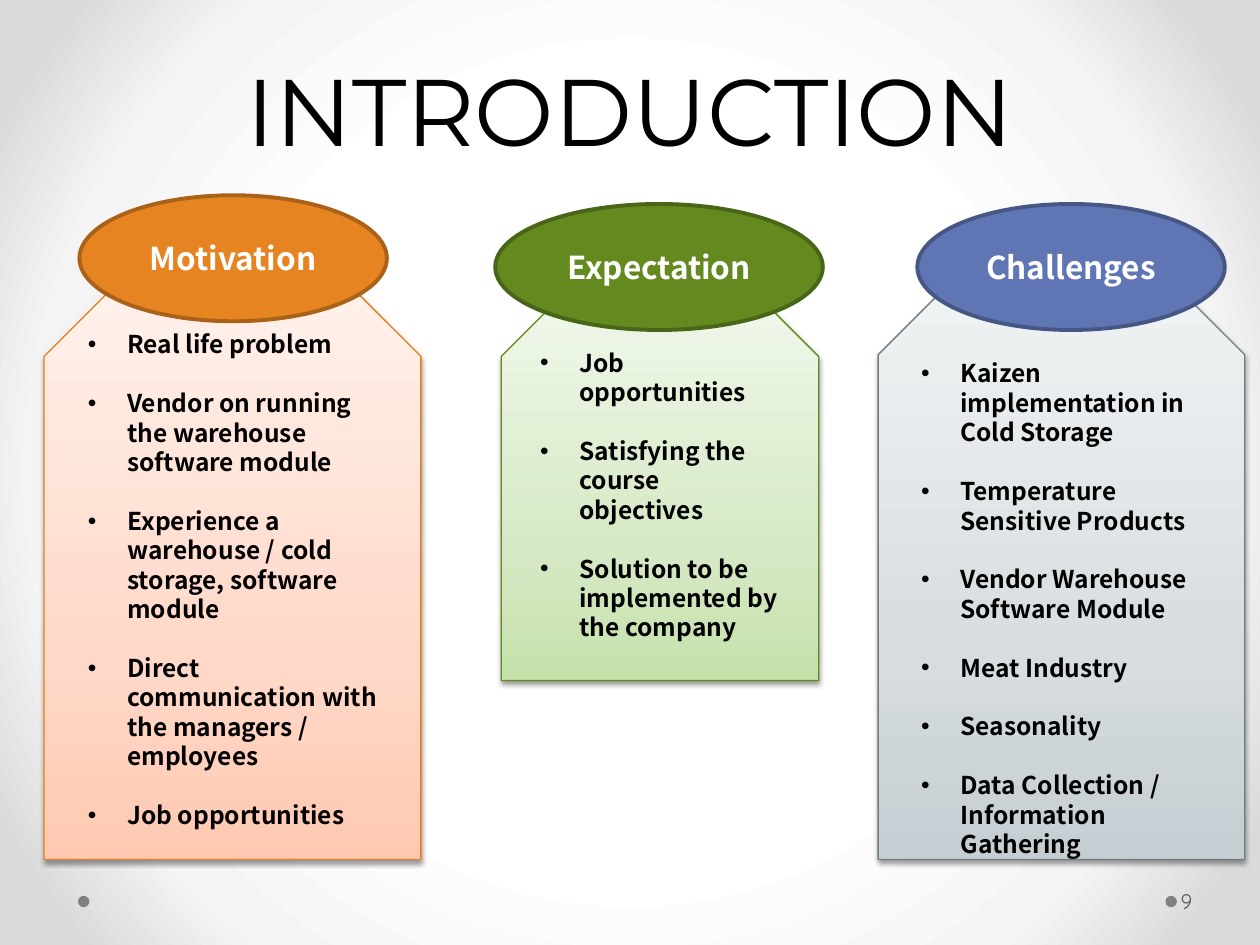
"""Build the introduction slide with three themed columns."""
import pptx
import pptx.dml.color
import pptx.enum.shapes
import pptx.enum.text
import pptx.oxml
import pptx.oxml.ns
import pptx.util

Pt = pptx.util.Pt
FORM = pptx.enum.shapes.MSO_SHAPE
ALIGN = pptx.enum.text.PP_ALIGN
ANCHOR = pptx.enum.text.MSO_ANCHOR
SPACE = pptx.oxml.ns.nsdecls("a")
BODY = "Noto Sans CJK SC"
STEP = 16.8
INDENT = 22.5

HUES = {"black": "000000", "white": "FFFFFF", "dot": "808080", "page": "595959"}
BACK = [(50, "FFFFFF"), (76, "F4F4F4"), (92, "DADADA")]
TITLE = "INTRODUCTION"
NUMBER = "9"
DOTS = [44.6, 666]

COLUMNS = [
    {"head": "Motivation", "oval": (45.4, 111.6, 175.7, 72),
     "card": (25.2, 167.8, 215.3, 323.3), "inset": 2.5,
     "fill": "E68422", "rim": "AA6219", "line": "E6811C",
     "fade": [(0, "FFC9B1"), (35, "FFD8C8"), (100, "FFF0EA")],
     "items": ["Real life problem",
               "Vendor on running the warehouse software module",
               "Experience a warehouse / cold storage, software module",
               "Direct communication with the managers / employees",
               "Job opportunities"]},
    {"head": "Expectation", "oval": (283, 116.6, 187.2, 72),
     "card": (286.4, 173.5, 181.4, 215.3), "inset": 10,
     "fill": "63891F", "rim": "496517", "line": "62891C",
     "fade": [(0, "C5E1AB"), (35, "D6E9C5"), (100, "EFF7E9")],
     "items": ["Job opportunities",
               "Satisfying the course objectives",
               "Solution to be implemented by the company"]},
    {"head": "Challenges", "oval": (524.2, 116.6, 175.7, 72),
     "card": (501.8, 167.8, 209.5, 323.3), "inset": 19.6,
     "fill": "6076B4", "rim": "475785", "line": "727D82",
     "fade": [(0, "C5CED2"), (35, "D6DCDF"), (100, "EFF2F3")],
     "items": ["Kaizen implementation in Cold Storage",
               "Temperature Sensitive Products",
               "Vendor Warehouse Software Module",
               "Meat Industry", "Seasonality",
               "Data Collection / Information Gathering"]},
]
LINEAR = '<a:lin ang="16200000" scaled="0"/>'
RADIAL = ('<a:path path="circle"><a:fillToRect l="50000" t="50000" '
          'r="50000" b="50000"/></a:path>')
SHADOW = (f'<a:effectLst {SPACE}><a:outerShdw blurRad="39400" dist="20300" '
          'dir="5400000" rotWithShape="0"><a:srgbClr val="000000">'
          '<a:alpha val="38000"/></a:srgbClr></a:outerShdw></a:effectLst>')


def color(code):
    return pptx.dml.color.RGBColor.from_string(code)


def blend(fill, owner, stops, mode):
    fill.gradient()
    old = owner.find(pptx.oxml.ns.qn("a:gradFill"))
    marks = "".join(f'<a:gs pos="{spot * 1000}"><a:srgbClr val="{code}"/></a:gs>'
                    for spot, code in stops)
    owner.replace(old, pptx.oxml.parse_xml(
        f'<a:gradFill {SPACE} rotWithShape="1"><a:gsLst>{marks}</a:gsLst>{mode}</a:gradFill>'))


def style(para, text, size, face, code, bold=False):
    para.text = text
    para.font.size = Pt(size)
    para.font.name = face
    para.font.bold = bold
    para.font.color.rgb = color(code)


def shape(slide, form, box, line=None, width=0):
    item = slide.shapes.add_shape(form, *map(Pt, box))
    item.shadow.inherit = False
    if line:
        item.line.color.rgb = color(line)
        item.line.width = Pt(width)
    else:
        item.line.fill.background()
    return item


def oval(slide, box, fill, rim=None):
    item = shape(slide, FORM.OVAL, box, rim, 2.25)
    item.fill.solid()
    item.fill.fore_color.rgb = color(fill)
    return item


def label(slide, box, anchor):
    frame = slide.shapes.add_textbox(*map(Pt, box)).text_frame
    frame.word_wrap = True
    frame.vertical_anchor = anchor
    return frame


def bullet(para, text, first):
    style(para, text, 14, BODY, HUES["black"], True)
    para.alignment = ALIGN.LEFT
    para.line_spacing = Pt(STEP)
    para.space_before = Pt(0 if first else STEP)
    props = para._p.get_or_add_pPr()
    props.set("marL", str(Pt(INDENT)))
    props.set("indent", str(Pt(-INDENT)))
    props.append(pptx.oxml.parse_xml(f'<a:buFont {SPACE} typeface="Arial"/>'))
    props.append(pptx.oxml.parse_xml(f'<a:buChar {SPACE} char="•"/>'))
    props.append(props.find(pptx.oxml.ns.qn("a:defRPr")))


def column(slide, data):
    card = shape(slide, FORM.SNIP_2_SAME_RECTANGLE, data["card"], data["line"], 0.75)
    props = card._element.spPr
    blend(card.fill, props, data["fade"], LINEAR)
    props.replace(props.find(pptx.oxml.ns.qn("a:effectLst")), pptx.oxml.parse_xml(SHADOW))
    frame = card.text_frame
    frame.word_wrap = True
    frame.vertical_anchor = ANCHOR.TOP
    frame.margin_top, frame.margin_bottom = Pt(data["inset"]), 0
    for i, text in enumerate(data["items"]):
        para = frame.add_paragraph() if i else frame.paragraphs[0]
        bullet(para, text, i == 0)
    frame = oval(slide, data["oval"], data["fill"], data["rim"]).text_frame
    frame.vertical_anchor = ANCHOR.MIDDLE
    para = frame.paragraphs[0]
    style(para, data["head"], 18, BODY, HUES["white"], True)
    para.alignment = ALIGN.CENTER


def main():
    deck = pptx.Presentation()
    deck.slide_width, deck.slide_height = Pt(720), Pt(540)
    slide = deck.slides.add_slide(deck.slide_layouts[6])
    fill = slide.background.fill
    blend(fill, slide._element.cSld.bg.bgPr, BACK, RADIAL)
    for left in DOTS:
        oval(slide, (left, 511.9, 6.5, 6.5), HUES["dot"])
    para = label(slide, (36, 15.1, 648, 82.8), ANCHOR.BOTTOM).paragraphs[0]
    style(para, TITLE, 54, "Montserrat", HUES["black"])
    para.alignment = ALIGN.CENTER
    para.line_spacing = Pt(58)
    frame = label(slide, (672.5, 500.4, 43.9, 28.8), ANCHOR.MIDDLE)
    frame.margin_left, frame.margin_right = Pt(2.2), Pt(3.6)
    style(frame.paragraphs[0], NUMBER, 12, "Quicksand", HUES["page"])
    for data in COLUMNS:
        column(slide, data)
    deck.save("out.pptx")


if __name__ == "__main__":
    main()
